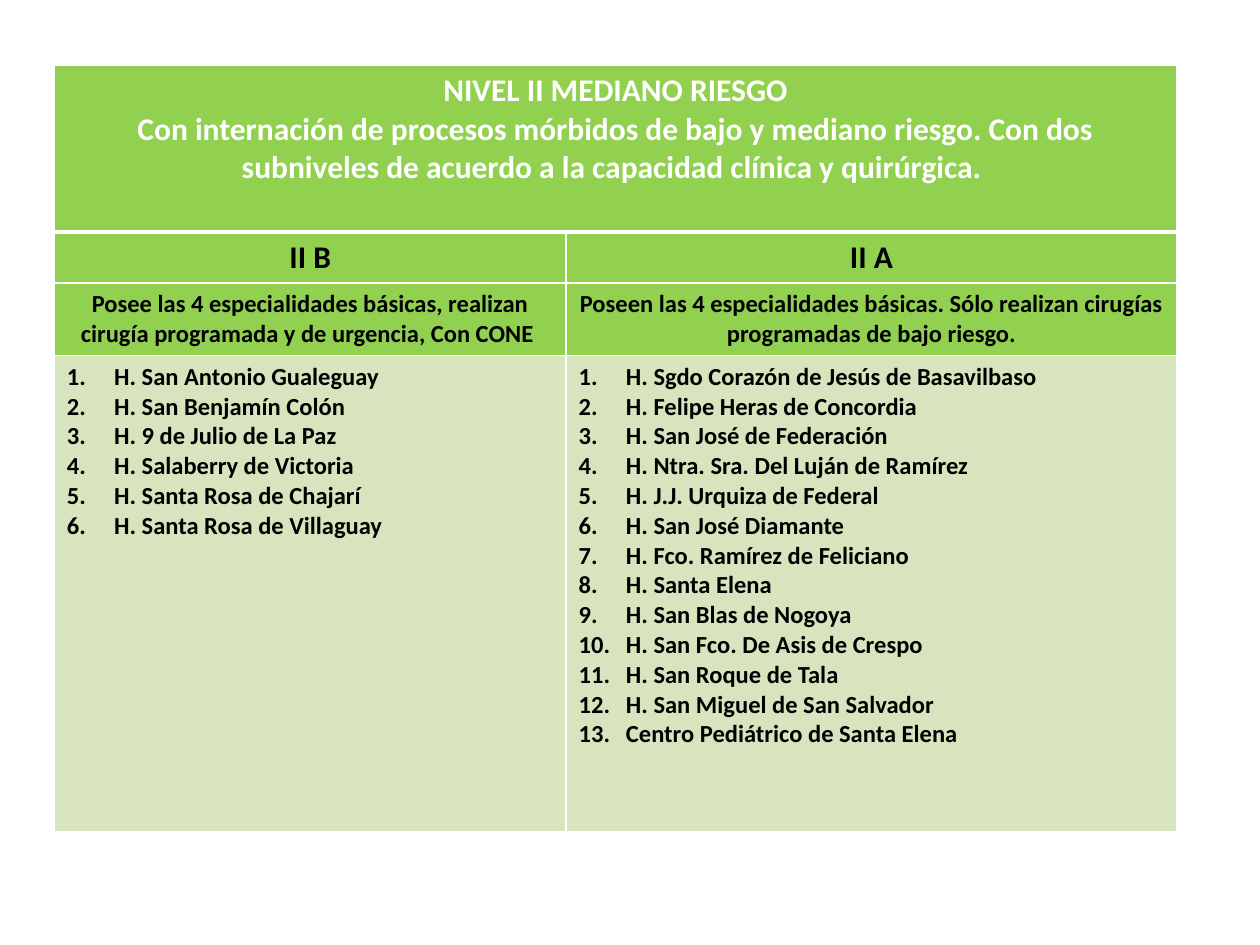
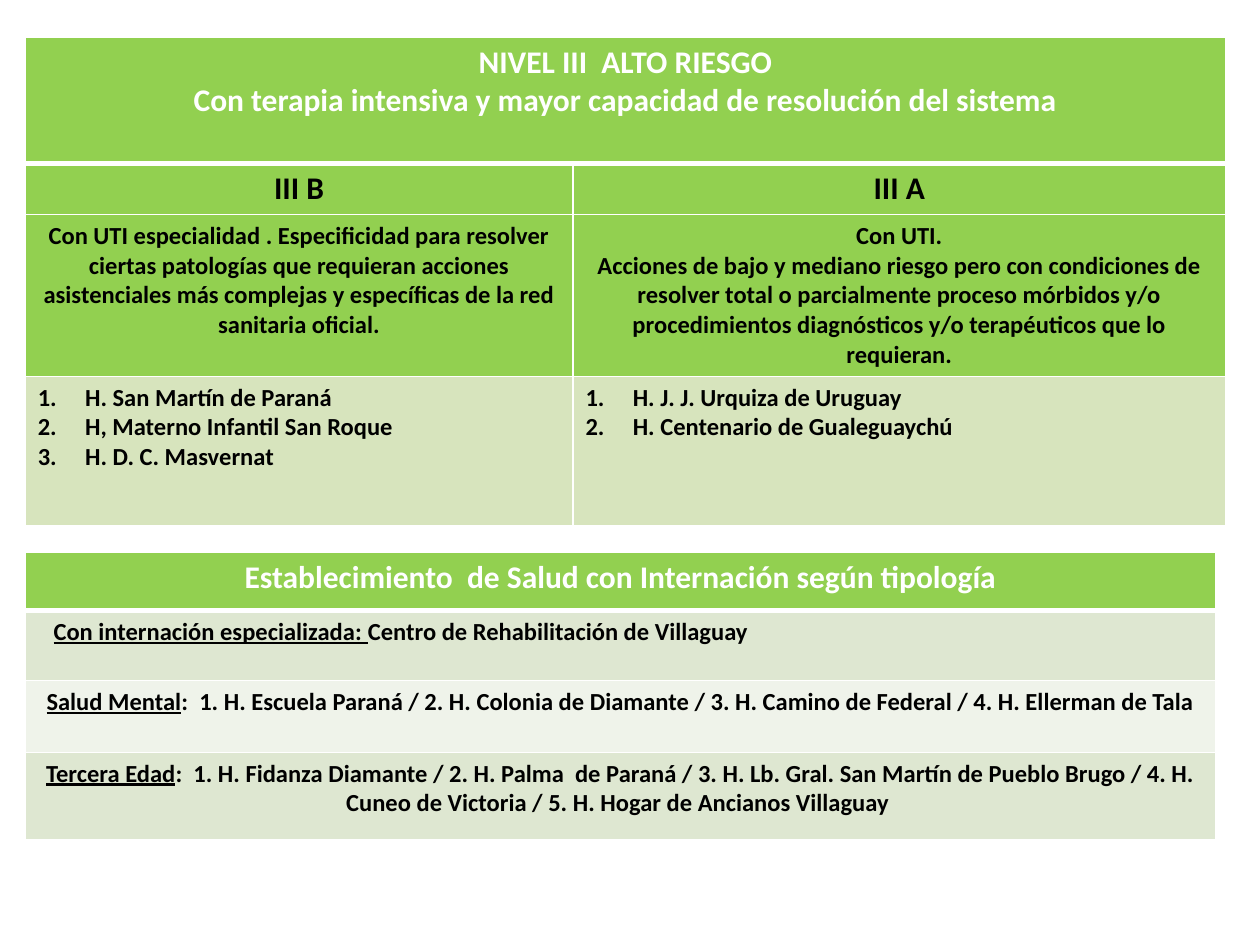
from pptx import Presentation
from pptx.dml.color import RGBColor
from pptx.enum import text as tx
from pptx.oxml import ns, xmlchemy
from pptx.util import Pt

GREEN, PALE_GREEN = "92D050", "D7E4BD"
BAND_DARK, BAND_LIGHT = "DEE7D1", "EFF3EA"
WHITE, BLACK = "FFFFFF", "000000"
FONT = "Calibri"
LIST_INDENT = 27


def colour(hex_value):
    return RGBColor.from_string(hex_value)


def number_paragraph(paragraph):
    props = paragraph._p.get_or_add_pPr()
    props.set("marL", str(Pt(LIST_INDENT)))
    props.set("indent", str(-Pt(LIST_INDENT)))
    numbering = xmlchemy.OxmlElement("a:buAutoNum")
    numbering.set("type", "arabicPeriod")
    props.append(numbering)


def write(frame, paragraphs, size=14, ink=BLACK, centred=True,
          numbered=False, left_indent=0):
    """Each paragraph is a string or a pair: underlined label, plain rest."""
    for index, content in enumerate(paragraphs):
        paragraph = frame.paragraphs[0] if index == 0 else frame.add_paragraph()
        paragraph.alignment = tx.PP_ALIGN.CENTER if centred else tx.PP_ALIGN.LEFT
        if numbered:
            number_paragraph(paragraph)
        elif left_indent:
            paragraph._p.get_or_add_pPr().set("marL", str(Pt(left_indent)))
        label, rest = ("", content) if isinstance(content, str) else content
        for words, underlined in ((label, True), (rest, False)):
            if not words:
                continue
            run = paragraph.add_run()
            run.text = words
            font = run.font
            font.name, font.size, font.bold = FONT, Pt(size), True
            font.color.rgb = colour(ink)
            font.underline = underlined


def set_borders(cell, top=1, bottom=1):
    props = cell._tc.get_or_add_tcPr()
    widths = {"a:lnL": 1, "a:lnR": 1, "a:lnT": top, "a:lnB": bottom}
    for position, (tag, width) in enumerate(widths.items()):
        line = xmlchemy.OxmlElement(tag)
        line.set("w", str(Pt(width)))
        fill = xmlchemy.OxmlElement("a:solidFill")
        ink = xmlchemy.OxmlElement("a:srgbClr")
        ink.set("val", WHITE)
        fill.append(ink)
        line.append(fill)
        props.insert(position, line)


def add_grid(slide, left, top, widths, heights, fills):
    """Table with one fill per row and a heavy rule below the header."""
    table = slide.shapes.add_table(len(heights), len(widths), Pt(left), Pt(top),
                                   Pt(sum(widths)), Pt(sum(heights))).table
    table.horz_banding = False
    for column, width in zip(table.columns, widths):
        column.width = Pt(width)
    for index, (row, height, fill) in enumerate(zip(table.rows, heights, fills)):
        row.height = Pt(height)
        for cell in row.cells:
            cell.fill.solid()
            cell.fill.fore_color.rgb = colour(fill)
            set_borders(cell, top=3 if index == 1 else 1,
                        bottom=3 if index == 0 else 1)
    return table


def add_level_table(slide, left, top, widths, heights, heading, sublevels):
    """Risk level: heading, then name, description and hospitals by sublevel."""
    table = add_grid(slide, left, top, widths, heights,
                     [GREEN, GREEN, GREEN, PALE_GREEN])
    table.cell(0, 0).merge(table.cell(0, 1))
    write(table.cell(0, 0).text_frame, heading, size=18, ink=WHITE)
    for column, (name, description, hospitals) in enumerate(sublevels):
        write(table.cell(1, column).text_frame, [name], size=18)
        write(table.cell(2, column).text_frame, description)
        write(table.cell(3, column).text_frame, hospitals,
              centred=False, numbered=True)


def add_typology_table(slide, left, top, width, heights, heading, types):
    """Inpatient establishments, one type per row; the first is left-aligned."""
    table = add_grid(slide, left, top, [width], heights,
                     [GREEN, BAND_DARK, BAND_LIGHT, BAND_DARK])
    write(table.cell(0, 0).text_frame, [heading], size=18, ink=WHITE)
    for row, establishment in enumerate(types, start=1):
        first = row == 1
        write(table.cell(row, 0).text_frame, [establishment],
              centred=not first, left_indent=9 if first else 0)


def build_level_two(slide):
    add_level_table(
        slide, 31, 37.5, [292.5, 349], [95, 29, 41.5, 272],
        ["NIVEL II MEDIANO RIESGO",
         "Con internación de procesos mórbidos de bajo y mediano riesgo. Con dos "
         "subniveles de acuerdo a la capacidad clínica y quirúrgica. "],
        [("II B",
          ["Posee las 4 especialidades básicas, realizan cirugía programada "
           "y de urgencia, Con CONE "],
          ["H. San Antonio Gualeguay", "H. San Benjamín Colón",
           "H. 9 de Julio de La Paz", "H. Salaberry de Victoria",
           "H. Santa Rosa de Chajarí", "H. Santa Rosa de Villaguay"]),
         ("II A",
          ["Poseen las 4 especialidades básicas. Sólo realizan cirugías "
           "programadas de bajo riesgo."],
          ["H. Sgdo Corazón de Jesús de Basavilbaso",
           "H. Felipe Heras de Concordia", "H. San José de Federación",
           "H. Ntra. Sra. Del Luján de Ramírez", "H. J.J. Urquiza de Federal",
           "H. San José Diamante", "H. Fco. Ramírez de Feliciano",
           "H. Santa Elena", "H. San Blas de Nogoya",
           "H. San Fco. De Asis de Crespo", "H. San Roque de Tala",
           "H. San Miguel de San Salvador",
           "Centro Pediátrico de Santa Elena"])])


def build_level_three(slide):
    add_level_table(
        slide, 14.4, 21, [313, 373], [72.5, 29, 92.5, 85.5],
        ["NIVEL III  ALTO RIESGO",
         "Con terapia intensiva y mayor capacidad de resolución del sistema"],
        [("III B",
          ["Con UTI especialidad . Especificidad para resolver ciertas patologías "
           "que requieran acciones asistenciales más complejas y específicas "
           "de la red sanitaria oficial."],
          ["H. San Martín de Paraná", "H, Materno Infantil San Roque",
           "H. D. C. Masvernat"]),
         ("III A",
          ["Con UTI.",
           "Acciones de bajo y mediano riesgo pero con condiciones de resolver "
           "total o parcialmente proceso mórbidos y/o procedimientos diagnósticos "
           "y/o terapéuticos que lo requieran."],
          ["H. J. J. Urquiza de Uruguay", "H. Centenario de Gualeguaychú"])])
    add_typology_table(
        slide, 14.4, 315.5, 680.5, [33.5, 40, 41, 50],
        "Establecimiento  de Salud con Internación según tipología",
        [("Con internación especializada: ", "Centro de Rehabilitación de Villaguay"),
         ("Salud Mental",
          ":  1. H. Escuela Paraná / 2. H. Colonia de Diamante / "
          "3. H. Camino de Federal / 4. H. Ellerman de Tala"),
         ("Tercera Edad",
          ":  1. H. Fidanza Diamante / 2. H. Palma  de Paraná / "
          "3. H. Lb. Gral. San Martín de Pueblo Brugo / "
          "4. H. Cuneo de Victoria / 5. H. Hogar de Ancianos Villaguay ")])


def main():
    deck = Presentation()
    deck.slide_width, deck.slide_height = Pt(720), Pt(540)
    blank = deck.slide_layouts.get_by_name("Blank")
    for build in (build_level_two, build_level_three):
        build(deck.slides.add_slide(blank))
    deck.save("out.pptx")


if __name__ == "__main__":
    main()
